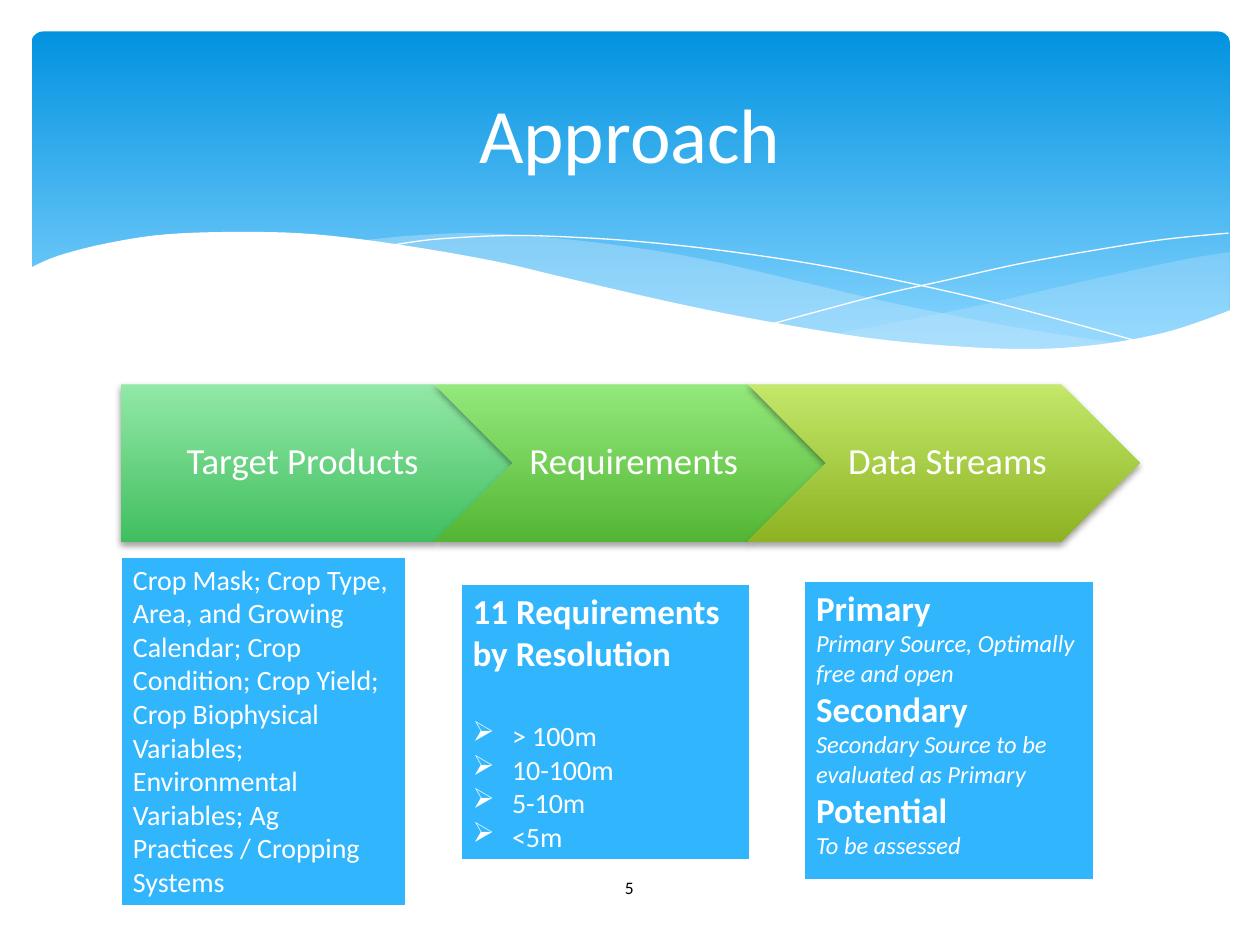
from dataclasses import dataclass

import lxml.etree
import pptx
import pptx.dml.color
import pptx.enum.shapes
import pptx.enum.text
import pptx.oxml.ns
import pptx.util

Pt = pptx.util.Pt
qn = pptx.oxml.ns.qn
SHAPE = pptx.enum.shapes.MSO_SHAPE
ALIGN = pptx.enum.text.PP_ALIGN
ANCHOR = pptx.enum.text.MSO_ANCHOR


@dataclass(frozen=True)
class Theme:
    font: str = "Calibri"
    white: str = "FFFFFF"
    black: str = "000000"
    card: str = "31B6FD"
    wave: str = "C6E7FC"
    banner: tuple = ("0293E0", "83D3FE")
    steps: tuple = (("92E8A6", "41BF60"), ("93E97B", "54B634"), ("C3E86A", "8DB222"))
    title: int = 44
    step: int = 21
    heading: int = 20
    body: int = 16
    detail: int = 14
    number: int = 10


THEME = Theme()

# Wave outlines, in points from the banner's top left corner
FAR_TOP = [(684.7, 126), (655.2, 131), (601.9, 142.6), (542.9, 156.2), (490.3, 167), (457.9, 172.8)]
FAR_BOTTOM = [(457.9, 172.8), (499.7, 177.8), (544.3, 181.4), (583.2, 181.4), (622.1, 177.8),
              (655.2, 170.6), (684.7, 159.8)]
NEAR_TOP = [(187.9, 119.5), (218.2, 116.6), (255.6, 115.2), (300.2, 118.1), (352.1, 124.6),
            (391.7, 131.8), (434.9, 141.8), (490.3, 154.8), (563, 169.2), (625, 178.6)]
NEAR_BOTTOM = [(625, 178.6), (599, 181.4), (563, 182.2), (520.6, 180.7), (471.6, 175), (414.7, 165.6),
               (363.6, 154.8), (305.3, 141.8), (257.8, 131), (228.2, 125.3), (187.9, 119.5)]
FALLING_LINE = [(204.5, 122.4), (229.7, 118.8), (270.7, 116.6), (306, 117.4), (349.2, 120.2),
                (401, 126), (460.8, 135.4), (529.2, 149.8), (580.3, 162.7), (635, 177.8)]
RISING_LINE = [(423.4, 167), (482.4, 151.2), (520.6, 142.6), (562.3, 133.2), (605.5, 125.3),
               (647.3, 118.8), (684, 115.2)]
PAGE_EDGE = [(-1.4, 135.4), (15.1, 128.2), (43.2, 121), (77, 115.9), (121, 114.5), (162, 115.9),
             (209.5, 121.7), (263.5, 131), (303.8, 140.4), (362.9, 154.1), (416.2, 164.9),
             (477.4, 175), (529.9, 180), (574.6, 181.4), (612, 178.6), (644.4, 172.8),
             (666, 166.3), (685.4, 159.1)]


def rgb(color):
    return pptx.dml.color.RGBColor.from_string(color)


def add_text(frame, text, *, size, color=THEME.white, bold=False, italic=False,
             align=ALIGN.LEFT, bullet=None, before=0, spacing=None):
    """Write one paragraph, using the frame's first one while it is empty."""
    first = frame.paragraphs[0]
    paragraph = frame.add_paragraph() if first.runs else first
    paragraph.alignment = align
    if spacing:
        paragraph.line_spacing = spacing
    if before:
        paragraph.space_before = Pt(before)
    if bullet:
        properties = paragraph._p.get_or_add_pPr()
        properties.set("marL", str(Pt(22.5)))
        properties.set("indent", str(-Pt(22.5)))
        lxml.etree.SubElement(properties, qn("a:buChar"), char=bullet)
    run = paragraph.add_run()
    run.text = text
    run.font.name, run.font.size = THEME.font, Pt(size)
    run.font.bold, run.font.italic = bold, italic
    run.font.color.rgb = rgb(color)


def add_label(slide, box, text, **text_format):
    frame = slide.shapes.add_textbox(*map(Pt, box)).text_frame
    frame.word_wrap = True
    frame.vertical_anchor = ANCHOR.MIDDLE
    add_text(frame, text, align=ALIGN.CENTER, **text_format)


def add_gradient_shape(slide, kind, box, colors, end=1.0):
    shape = slide.shapes.add_shape(kind, *map(Pt, box))
    shape.shadow.inherit = False
    shape.fill.gradient()
    shape.fill.gradient_angle = 270
    for stop, color, position in zip(shape.fill.gradient_stops, colors, (0.0, end)):
        stop.color.rgb = rgb(color)
        stop.position = position
    shape.line.fill.background()
    return shape


def add_drop_shadow(shape):
    effects = shape._element.spPr.find(qn("a:effectLst"))
    shadow = lxml.etree.SubElement(effects, qn("a:outerShdw"), blurRad=str(Pt(4)), dist=str(Pt(2)),
                                   dir="5400000", rotWithShape="0")
    color = lxml.etree.SubElement(shadow, qn("a:srgbClr"), val=THEME.black)
    lxml.etree.SubElement(color, qn("a:alpha"), val="38000")


def smooth_curve(knots, steps=5):
    """Points of a Catmull-Rom curve through the knots."""
    padded = [knots[0], *knots, knots[-1]]
    points = [knots[0]]
    for a, b, c, d in zip(padded, padded[1:], padded[2:], padded[3:]):
        for step in range(1, steps + 1):
            t = step / steps
            points.append(tuple(
                (2 * q + (r - p) * t + (2 * p - 5 * q + 4 * r - s) * t ** 2
                 + (3 * q - p - 3 * r + s) * t ** 3) / 2
                for p, q, r, s in zip(a, b, c, d)))
    return points


def add_wave(slide, origin, points, fill=None, opacity=100):
    """Draw a filled wave, or a hairline when there is no fill."""
    placed = [(Pt(origin[0] + x), Pt(origin[1] + y)) for x, y in points]
    builder = slide.shapes.build_freeform(*placed[0])
    builder.add_line_segments(placed[1:], close=fill is not None)
    wave = builder.convert_to_shape()
    wave.shadow.inherit = False
    if fill is None:
        wave.fill.background()
        wave.line.color.rgb = rgb(THEME.white)
        wave.line.width = Pt(0)
        return
    wave.fill.solid()
    wave.fill.fore_color.rgb = rgb(fill)
    wave.line.fill.background()
    if opacity < 100:
        color = wave._element.spPr.find(qn("a:solidFill")).find(qn("a:srgbClr"))
        lxml.etree.SubElement(color, qn("a:alpha"), val=str(opacity * 1000))


def add_banner(slide, box):
    panel = add_gradient_shape(slide, SHAPE.ROUNDED_RECTANGLE, box, THEME.banner, end=0.9)
    panel.adjustments[0] = 0.034
    origin = box[:2]
    add_wave(slide, origin, smooth_curve(FAR_TOP) + smooth_curve(FAR_BOTTOM), THEME.wave, 29)
    add_wave(slide, origin, smooth_curve(NEAR_TOP) + smooth_curve(NEAR_BOTTOM), THEME.wave, 40)
    add_wave(slide, origin, smooth_curve(FALLING_LINE))
    add_wave(slide, origin, smooth_curve(RISING_LINE))
    page_bottom = [(685.4, 218.9), (-1.4, 218.9)]
    add_wave(slide, origin, smooth_curve(PAGE_EDGE) + page_bottom, THEME.white)


def add_process(slide, box, names):
    """Overlapping arrows: each starts 80% of an arrow's width after the last."""
    left, top, width, height = box
    arrow_width = width / (1 + 0.8 * (len(names) - 1))
    for index, (name, colors) in enumerate(zip(names, THEME.steps)):
        kind = SHAPE.CHEVRON if index else SHAPE.PENTAGON
        arrow_box = (left + 0.8 * arrow_width * index, top, arrow_width, height)
        arrow = add_gradient_shape(slide, kind, arrow_box, colors)
        add_drop_shadow(arrow)
        frame = arrow.text_frame
        frame.word_wrap = True
        frame.vertical_anchor = ANCHOR.MIDDLE
        frame.margin_left, frame.margin_right = Pt(6 if index else 8.4), Pt(2)
        add_text(frame, name, size=THEME.step, align=ALIGN.CENTER, spacing=0.9)


def add_card(slide, box, paragraphs):
    card = slide.shapes.add_shape(SHAPE.RECTANGLE, *map(Pt, box))
    card.shadow.inherit = False
    card.fill.solid()
    card.fill.fore_color.rgb = rgb(THEME.card)
    card.line.color.rgb = rgb(THEME.white)
    card.line.width = Pt(2)
    card.text_frame.word_wrap = True
    card.text_frame.vertical_anchor = ANCHOR.TOP
    for text, text_format in paragraphs:
        add_text(card.text_frame, text, **text_format)


def main():
    deck = pptx.Presentation()
    deck.slide_width, deck.slide_height = Pt(720), Pt(540)
    slide = deck.slides.add_slide(deck.slide_layouts[6])

    add_banner(slide, (18, 18, 684.7, 194.4))
    add_process(slide, (69, 219.6, 582.4, 90), ("Target Products", "Requirements", "Data Streams"))
    add_label(slide, (314, 492.5, 91.4, 28.8), "5", size=THEME.number, color=THEME.black)
    add_label(slide, (36, 26.6, 648, 98.6), "Approach", size=THEME.title)

    # Cards below the arrows
    body = dict(size=THEME.body)
    heading = dict(size=THEME.heading, bold=True)
    detail = dict(size=THEME.detail, italic=True)
    products = ("Crop Mask; Crop Type, Area, and Growing Calendar; Crop Condition; Crop Yield; "
                "Crop Biophysical Variables; Environmental Variables; Ag Practices / Cropping Systems")
    add_card(slide, (68.9, 317.7, 163.4, 200.5), [(products, body)])

    resolutions = [(text, dict(body, bullet="➢", before=0 if index else 25.6))
                   for index, text in enumerate(("> 100m", "10-100m", "5-10m", "<5m"))]
    add_card(slide, (263, 333.4, 166.3, 158.4), [("11 Requirements by Resolution", heading), *resolutions])

    streams = (("Primary", "Primary Source, Optimally free and open"),
               ("Secondary", "Secondary Source to be evaluated as Primary"),
               ("Potential", "To be assessed"))
    add_card(slide, (459.2, 331.5, 166.3, 171.8),
             [line for name, note in streams for line in ((name, heading), (note, detail))])

    deck.save("out.pptx")


if __name__ == "__main__":
    main()
